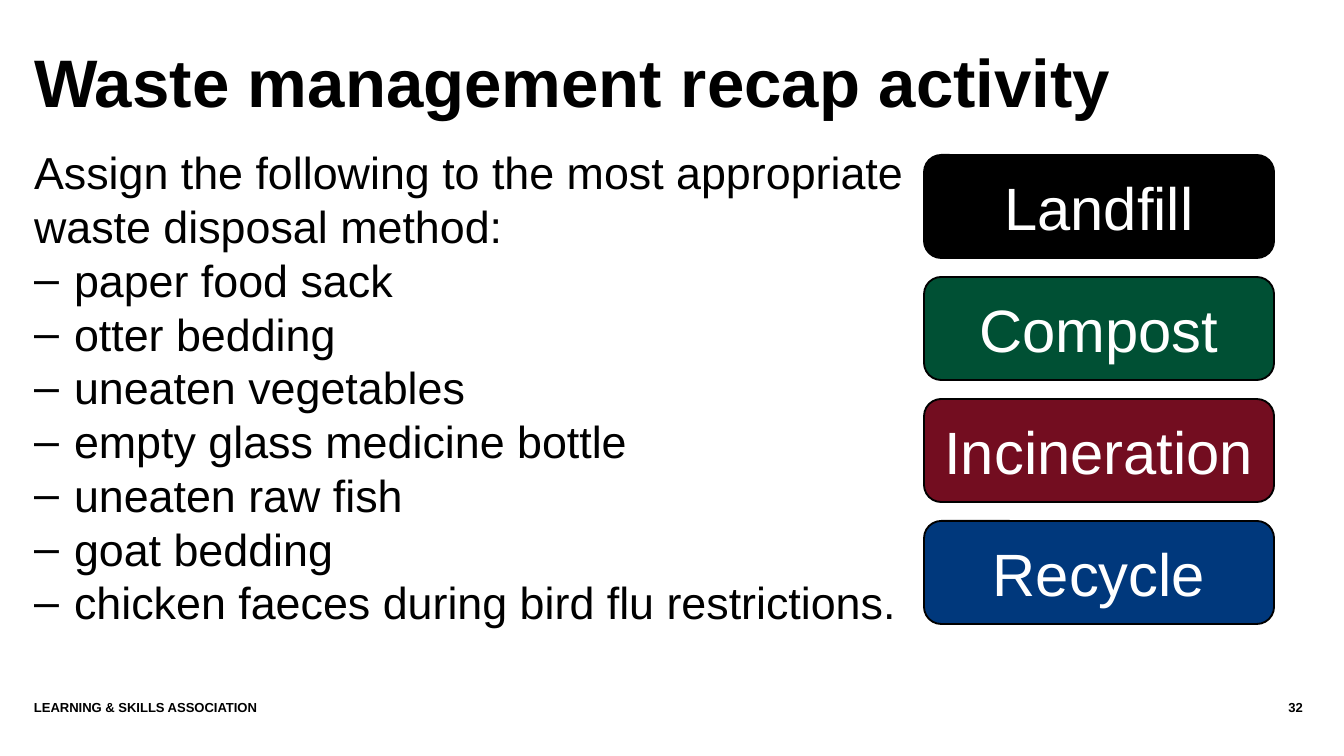
from pptx import Presentation
from pptx import util as u
from pptx.dml.color import RGBColor
from pptx.enum import shapes, text
from pptx.oxml.ns import qn
from lxml import etree

BLACK = RGBColor(0x00, 0x00, 0x00)
WHITE = RGBColor(0xFF, 0xFF, 0xFF)
GREEN = RGBColor(0x00, 0x50, 0x34)
RED = RGBColor(0x73, 0x0D, 0x20)
BLUE = RGBColor(0x00, 0x38, 0x7C)

TITLE = "Waste management recap activity"
TASK = "Assign the following to the most appropriate waste disposal method:"
ITEMS = [
    "paper food sack",
    "otter bedding",
    "uneaten vegetables",
    "empty glass medicine bottle",
    "uneaten raw fish",
    "goat bedding",
    "chicken faeces during bird flu restrictions.",
]
METHODS = [
    ("Landfill", BLACK),
    ("Compost", GREEN),
    ("Incineration", RED),
    ("Recycle", BLUE),
]
LEFT, RIGHT = text.PP_ALIGN.LEFT, text.PP_ALIGN.RIGHT
FOOTER = [
    ("LEARNING & SKILLS ASSOCIATION", (34, 700, 1130, 40), LEFT),
    ("32", (1169, 700, 134, 40), RIGHT),
]

TITLE_BOX = (34, 35, 1240, 102)
BODY_BOX = (34, 145, 872, 530)
CARD_X, CARD_Y, CARD_W, CARD_H, CARD_STEP = 924, 155, 350, 103, 122
INDENT = 40


def px(n):
    return u.Emu(round(n * 914400 / 134.4))


def place(shape, box):
    shape.left, shape.top, shape.width, shape.height = map(px, box)


def clear(frame, anchor):
    """Give a text frame no margins, wrapping and a fixed size."""
    frame.margin_left = frame.margin_right = 0
    frame.margin_top = frame.margin_bottom = 0
    frame.word_wrap = True
    frame.auto_size = text.MSO_AUTO_SIZE.NONE
    frame.vertical_anchor = anchor


def write(para, words, size, color=BLACK, bold=False, align=LEFT):
    para.alignment = align
    run = para.add_run()
    run.text = words
    font = run.font
    font.name, font.size, font.bold = "Arial", u.Pt(size), bold
    font.color.rgb = color


def set_bullet(para, mark=None):
    """Hang the paragraph on a mark, or remove bullet and indent."""
    props = para._p.get_or_add_pPr()
    gap = px(INDENT) if mark else 0
    props.set("marL", str(gap))
    props.set("indent", str(-gap))
    if mark:
        etree.SubElement(props, qn("a:buChar")).set("char", mark)
    else:
        etree.SubElement(props, qn("a:buNone"))


def add_title(slide):
    title = slide.shapes.title
    place(title, TITLE_BOX)
    clear(title.text_frame, text.MSO_ANCHOR.MIDDLE)
    para = title.text_frame.paragraphs[0]
    para.line_spacing = 0.9
    write(para, TITLE, 36, bold=True)


def add_body(slide):
    body = slide.placeholders[1]
    place(body, BODY_BOX)
    frame = body.text_frame
    clear(frame, text.MSO_ANCHOR.TOP)
    for i, words in enumerate([TASK] + ITEMS):
        para = frame.add_paragraph() if i else frame.paragraphs[0]
        para.level = 1 if i else 0
        para.line_spacing = u.Pt(28.8)
        para.space_before = para.space_after = u.Pt(0)
        set_bullet(para, "–" if i else None)
        write(para, words, 24)


def add_cards(slide):
    for i, (name, color) in enumerate(METHODS):
        box = (CARD_X, CARD_Y + i * CARD_STEP, CARD_W, CARD_H)
        card = slide.shapes.add_shape(
            shapes.MSO_SHAPE.ROUNDED_RECTANGLE, *map(px, box))
        card.shadow.inherit = False
        card.fill.solid()
        card.fill.fore_color.rgb = color
        card.line.color.rgb = BLACK
        card.line.width = u.Pt(1)
        frame = card.text_frame
        frame.vertical_anchor = text.MSO_ANCHOR.MIDDLE
        write(frame.paragraphs[0], name, 32, WHITE,
              align=text.PP_ALIGN.CENTER)


def add_footer(slide):
    for words, box, align in FOOTER:
        frame = slide.shapes.add_textbox(*map(px, box)).text_frame
        clear(frame, text.MSO_ANCHOR.TOP)
        write(frame.paragraphs[0], words, 7, bold=True, align=align)


def main():
    deck = Presentation()
    deck.slide_width, deck.slide_height = px(1344), px(756)
    slide = deck.slides.add_slide(deck.slide_layouts[1])
    add_title(slide)
    add_body(slide)
    add_cards(slide)
    add_footer(slide)
    deck.save("out.pptx")


if __name__ == "__main__":
    main()
